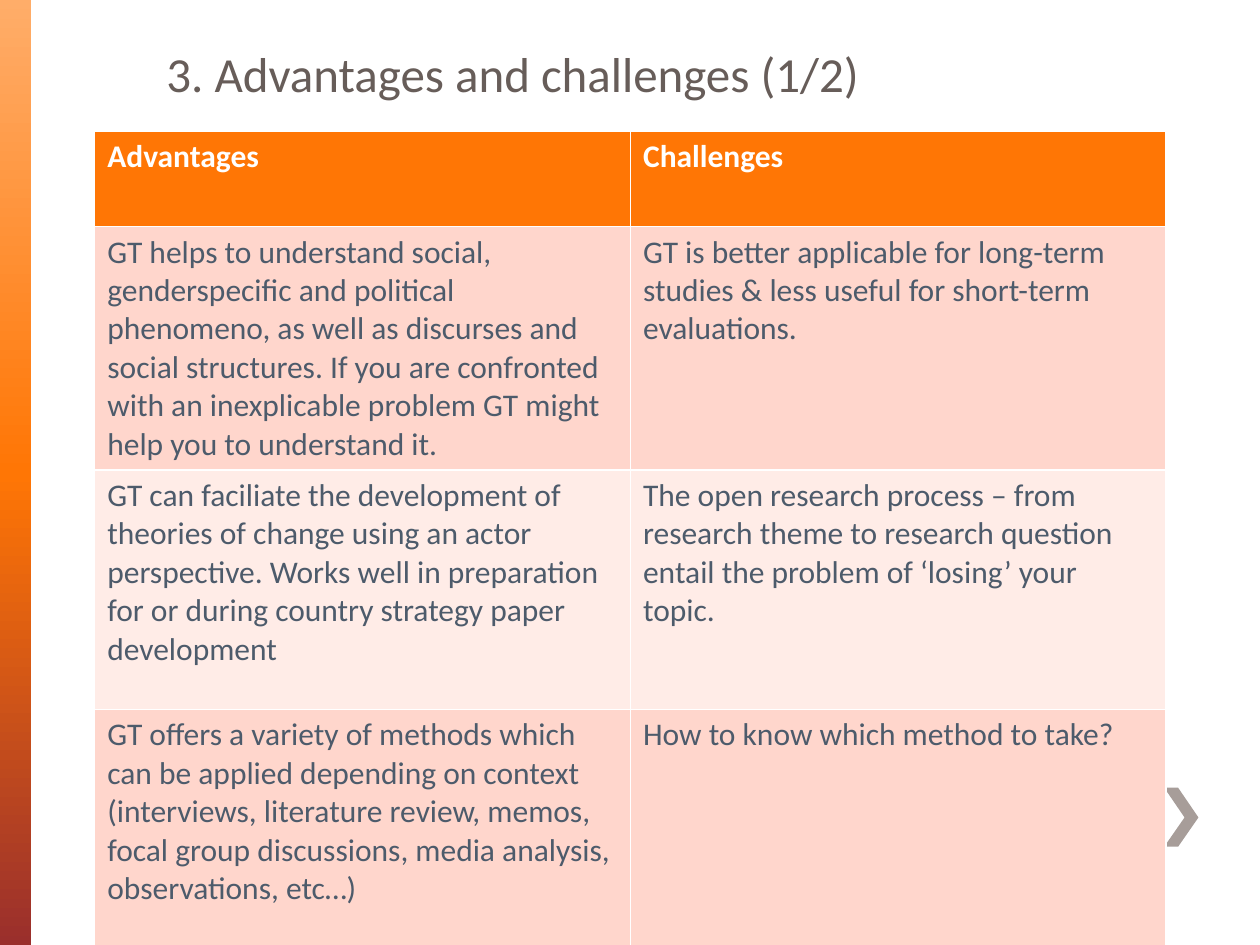
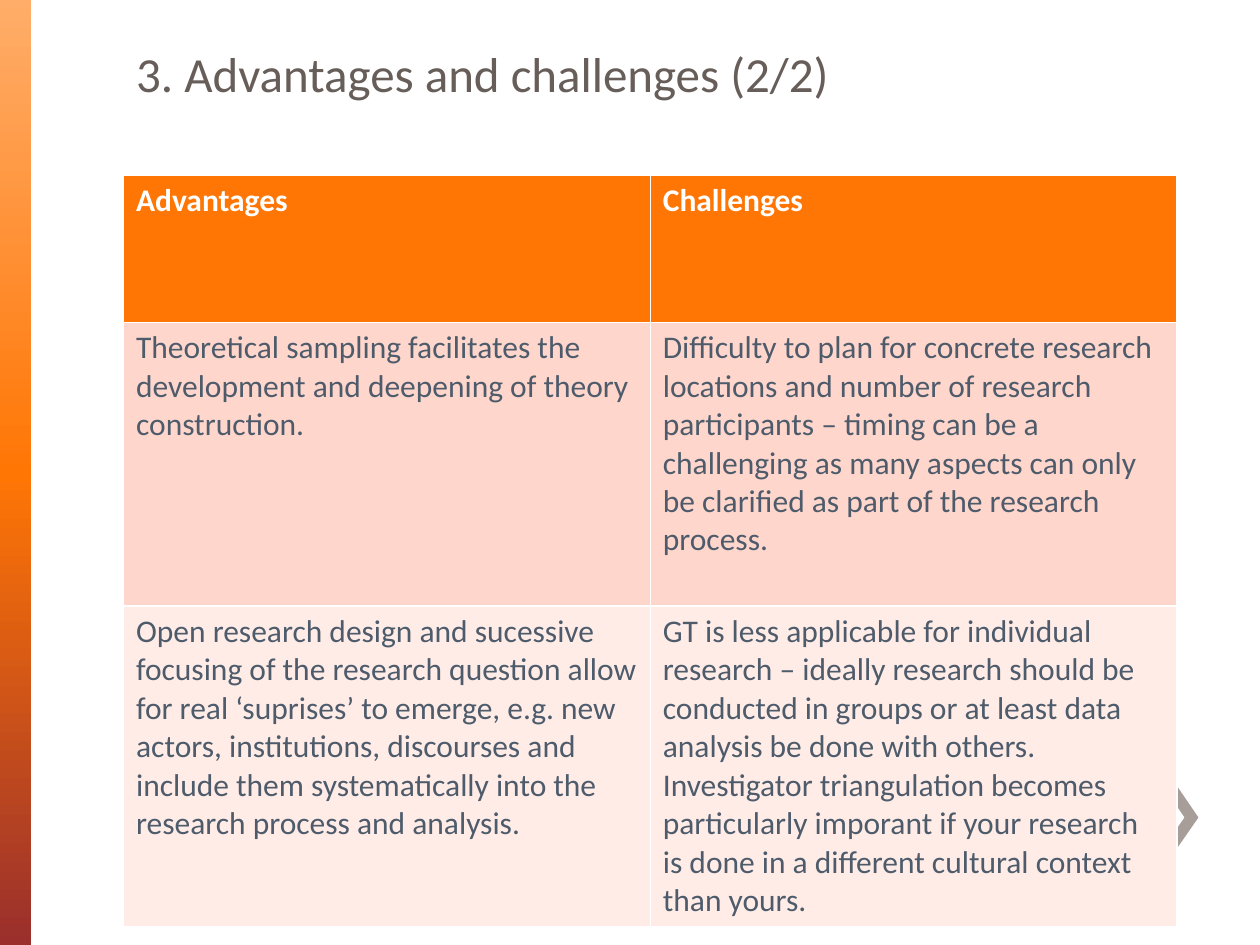
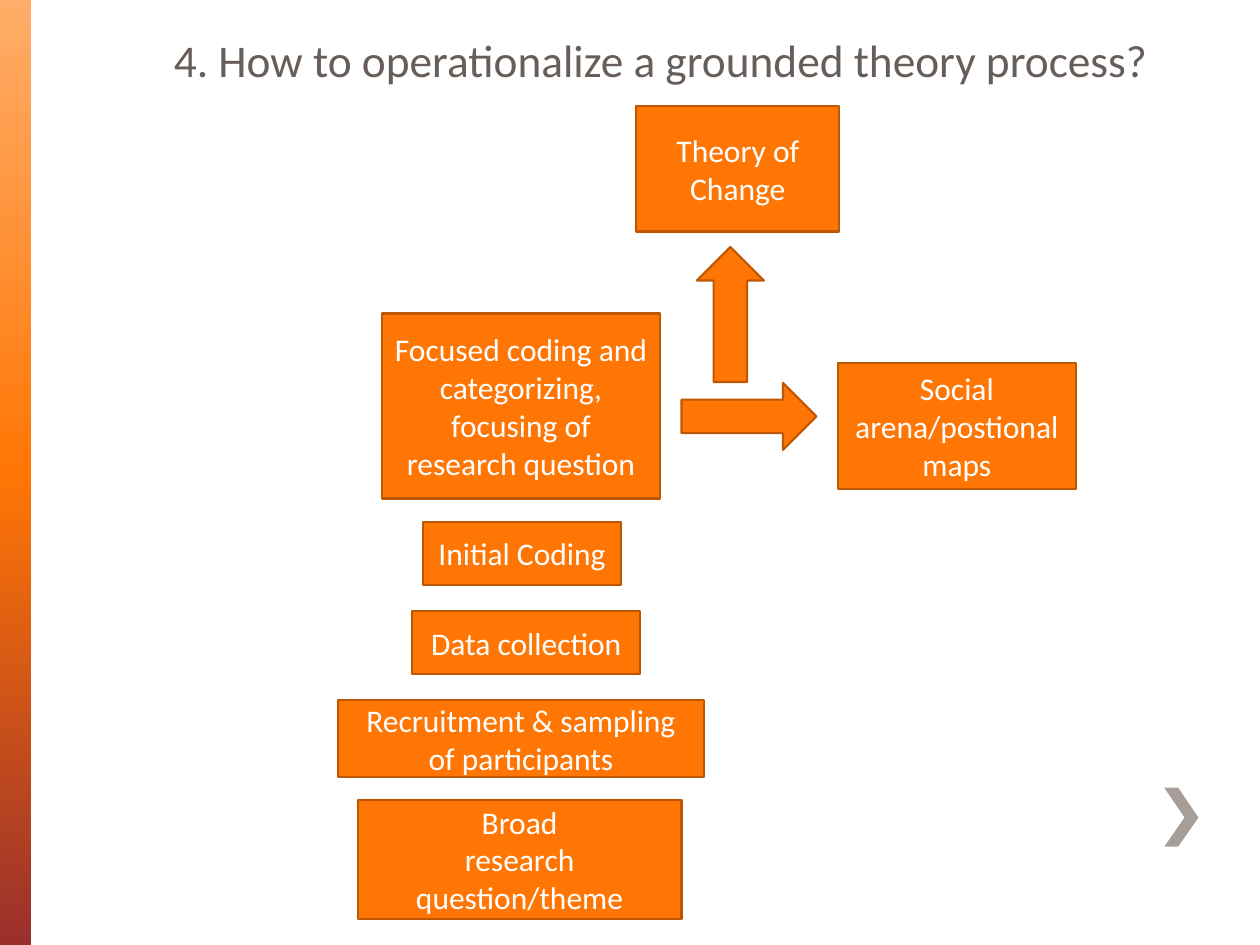
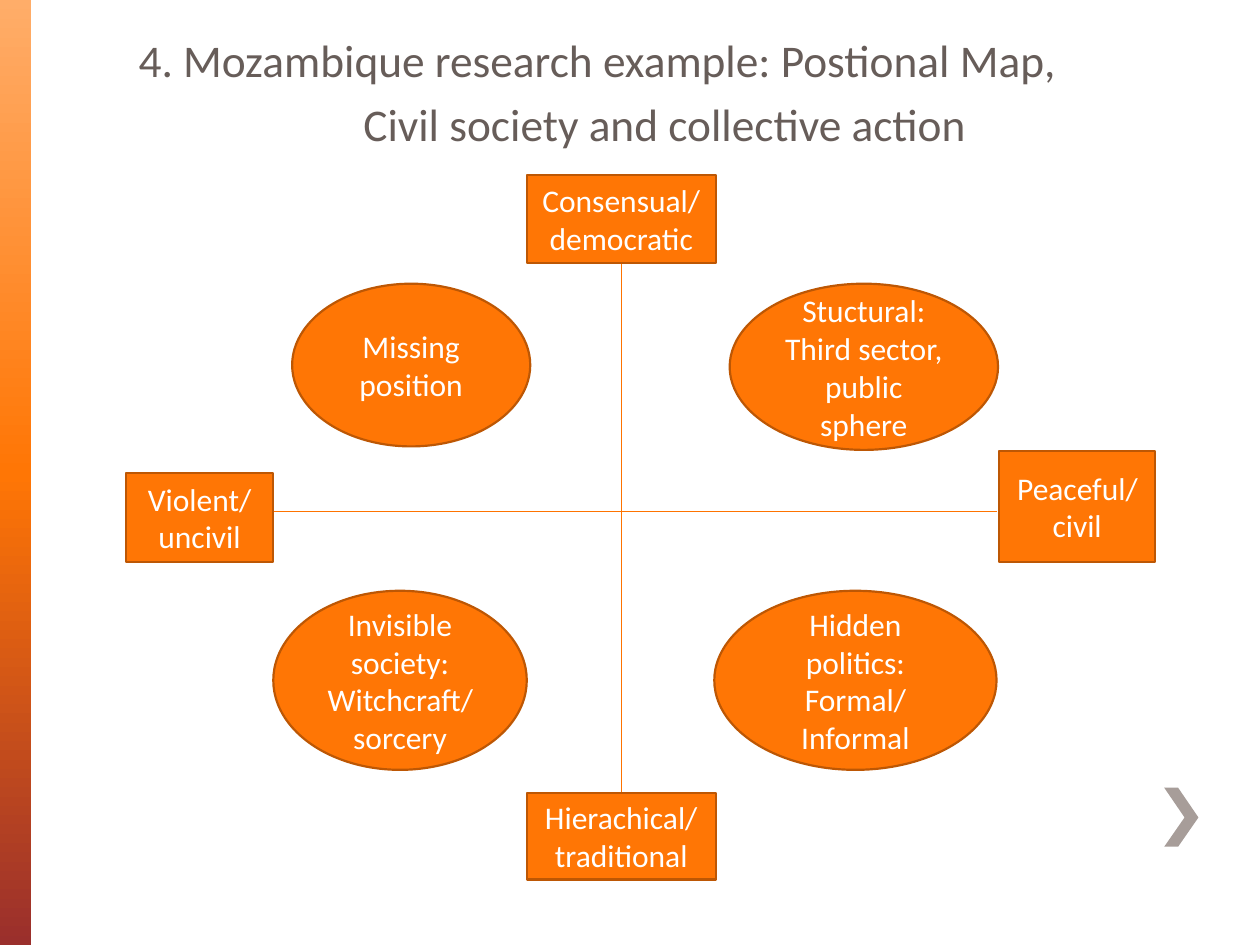
from copy import deepcopy

from lxml import etree
from pptx import Presentation
from pptx.dml.color import RGBColor
from pptx.enum.shapes import MSO_CONNECTOR, MSO_SHAPE
from pptx.enum.text import MSO_ANCHOR, MSO_AUTO_SIZE, PP_ALIGN
from pptx.oxml.ns import qn
from pptx.util import Cm, Pt

RECTANGLE = MSO_SHAPE.RECTANGLE
ELLIPSE = MSO_SHAPE.OVAL
RIGHT_ARROW = MSO_SHAPE.RIGHT_ARROW
UP_ARROW = MSO_SHAPE.UP_ARROW
STRAIGHT = MSO_CONNECTOR.STRAIGHT
TOP = MSO_ANCHOR.TOP
MIDDLE = MSO_ANCHOR.MIDDLE
LEFT = PP_ALIGN.LEFT
CENTER = PP_ALIGN.CENTER
NO_AUTOFIT = MSO_AUTO_SIZE.NONE

FONT = "Calibri"
ORANGE = "FF7605"
OUTLINE = "BD5704"
AXIS = "FE7300"
TITLE_TEXT = "675D59"
TABLE_TEXT = "4D5B6B"
CHEVRON = "A79D99"
WHITE = "FFFFFF"
ROW_FILLS = ["FFD6CC", "FFECE7"]
BAND_STOPS = [(0, "FFAD69"), (0.5, ORANGE), (1, "9A2F2C")]


def colour(hex_string):
    return RGBColor.from_string(hex_string)


def add_block(page, kind, text, left, top, width, height):
    block = page.shapes.add_shape(kind, Cm(left), Cm(top), Cm(width), Cm(height))
    block.shadow.inherit = False
    block.fill.solid()
    block.fill.fore_color.rgb = colour(ORANGE)
    block.line.color.rgb = colour(OUTLINE)
    block.line.width = Pt(1.25)
    block.text_frame.text = text
    block.text_frame.vertical_anchor = MIDDLE
    for para in block.text_frame.paragraphs:
        para.alignment = CENTER
        para.font.name = FONT
        para.font.size = Pt(18)
        para.font.color.rgb = colour(WHITE)
    return block


deck = Presentation()
deck.slide_width = Cm(25.4)
deck.slide_height = Cm(19.05)
layout = deck.slide_layouts[5]

# Pages and titles: text, size, left, top, width, height
titles = [
    ("3. Advantages and challenges (1/2)", 28, 3.1, 0.74, 20.62, 2.59),
    ("3. Advantages and challenges (2/2)", 28, 2.49, 0.74, 21.23, 2.59),
    ("4. How to operationalize a grounded theory process?", 25.9, 3.25, 0.53, 21.01, 2.01),
    ("4. Mozambique research example: Postional Map,\nCivil society and collective action",
     25.9, 2.54, 0.53, 21.72, 2.59),
]
pages = []
for text, size, left, top, width, height in titles:
    page = deck.slides.add_slide(layout)
    title = page.shapes.title
    title.left, title.top = Cm(left), Cm(top)
    title.width, title.height = Cm(width), Cm(height)
    frame = title.text_frame
    frame.text = text
    frame.word_wrap = True
    frame.auto_size = NO_AUTOFIT
    frame.vertical_anchor = TOP
    for number, para in enumerate(frame.paragraphs):
        para.alignment = CENTER if number else LEFT
        para.space_before = Pt(size * 0.2)
        para.font.name = FONT
        para.font.size = Pt(size)
        para.font.color.rgb = colour(TITLE_TEXT)
    pages.append(page)
page_table_one, page_table_two, page_process, page_map = pages

# Shared gradient band and chevron, built once and moved to the layout
band = page_table_one.shapes.add_shape(RECTANGLE, 0, 0, Cm(0.63), deck.slide_height)
band.fill.gradient()
band.fill.gradient_angle = 270
stop_list = band.element.spPr.find(".//" + qn("a:gsLst"))
stop_list.insert(1, deepcopy(stop_list[0]))
for stop, (position, shade) in zip(band.fill.gradient_stops, BAND_STOPS):
    stop.position = position
    stop.color.rgb = colour(shade)

outline = page_table_one.shapes.build_freeform(2375, 1588, scale=Cm(0.01))
outline.add_line_segments([(2347, 1588), (2388, 1648), (2347, 1707), (2375, 1707), (2416, 1648)])
chevron = outline.convert_to_shape()
chevron.fill.solid()
chevron.fill.fore_color.rgb = colour(CHEVRON)

for number, shape in enumerate([band, chevron], 20):
    shape.shadow.inherit = False
    shape.line.fill.background()
    shape.element.nvSpPr.cNvPr.set("id", str(number))
    layout.shapes.element.append(shape.element)

# Tables: page, left, top, column width, row heights, body rows
tables = [
    (page_table_one, 1.91, 2.64, 10.8, [1.93, 3.91, 4.83, 4.83], [
        ("GT helps to understand social, genderspecific and political phenomeno, as well as "
         "discurses and social structures. If you are confronted with an inexplicable problem "
         "GT might help you to understand it.",
         "GT is better applicable for long-term studies & less useful for short-term evaluations."),
        ("GT can faciliate the development of theories of change using an actor perspective. "
         "Works well in preparation for or during country strategy paper development",
         "The open research process – from research theme to research question entail the "
         "problem of ‘losing’ your topic."),
        ("GT offers a variety of methods which can be applied depending on context (interviews, "
         "literature review, memos, focal group discussions, media analysis, observations, etc…)",
         "How to know which method to take?"),
    ]),
    (page_table_two, 2.49, 3.53, 10.62, [2.97, 5.72, 5.72], [
        ("Theoretical sampling facilitates the development and deepening of theory construction.",
         "Difficulty to plan for concrete research locations and number of research participants "
         "– timing can be a challenging as many aspects can only be clarified as part of the "
         "research process."),
        ("Open research design and sucessive focusing of the research question allow for real "
         "‘suprises’ to emerge, e.g. new actors, institutions, discourses and include them "
         "systematically into the research process and analysis.",
         "GT is less applicable for individual research – ideally research should be conducted "
         "in groups or at least data analysis be done with others. Investigator triangulation "
         "becomes particularly imporant if your research is done in a different cultural context "
         "than yours."),
    ]),
]
for page, left, top, column_width, row_heights, body in tables:
    rows = [("Advantages", "Challenges")] + body
    table = page.shapes.add_table(len(rows), 2, Cm(left), Cm(top),
                                  Cm(2 * column_width), Cm(sum(row_heights))).table
    for column in table.columns:
        column.width = Cm(column_width)
    for row_number, texts in enumerate(rows):
        table.rows[row_number].height = Cm(row_heights[row_number])
        is_header = row_number == 0
        for column_number, text in enumerate(texts):
            cell = table.cell(row_number, column_number)
            cell.fill.solid()
            cell.fill.fore_color.rgb = colour(ORANGE if is_header else ROW_FILLS[(row_number - 1) % 2])
            cell.text = text
            para = cell.text_frame.paragraphs[0]
            para.font.name = FONT
            para.font.size = Pt(18)
            para.font.bold = is_header
            para.font.color.rgb = colour(WHITE if is_header else TABLE_TEXT)

# Grounded theory process, from the bottom up
process_blocks = [
    (RECTANGLE, "Broad\nresearch question/theme", 7.21, 16.13, 6.53, 2.39),
    (RECTANGLE, "Recruitment & sampling of participants", 6.81, 14.12, 7.39, 1.55),
    (RECTANGLE, "Data collection", 8.31, 12.32, 4.6, 1.27),
    (RECTANGLE, "Initial Coding", 8.53, 10.52, 3.99, 1.27),
    (RECTANGLE, "Focused coding and categorizing, focusing of research question",
     7.7, 6.32, 5.61, 3.73),
    (RIGHT_ARROW, "", 13.74, 7.72, 2.72, 1.35),
    (RECTANGLE, "Social arena/postional maps", 16.89, 7.32, 4.8, 2.54),
    (UP_ARROW, "", 14.05, 4.98, 1.35, 2.72),
    (RECTANGLE, "Theory of Change", 12.83, 2.13, 4.09, 2.54),
]
for block in process_blocks:
    add_block(page_process, *block)

# Positional map: axes behind the poles and positions
vertical_axis = page_map.shapes.add_connector(STRAIGHT, Cm(12.52), Cm(5.31), Cm(12.52), Cm(15.98))
horizontal_axis = page_map.shapes.add_connector(STRAIGHT, Cm(5.51), Cm(10.31), Cm(20.09), Cm(10.31))
for axis in (vertical_axis, horizontal_axis):
    axis.line.color.rgb = colour(AXIS)
    axis.line.width = Pt(0.75)
    etree.SubElement(axis.element.spPr, qn("a:effectLst"))

upper_pole = add_block(page_map, RECTANGLE, "Consensual/democratic", 10.62, 3.53, 3.81, 1.78)
lower_pole = add_block(page_map, RECTANGLE, "Hierachical/traditional", 10.62, 15.98, 3.81, 1.75)
vertical_axis.begin_connect(upper_pole, 2)
vertical_axis.end_connect(lower_pole, 0)

map_blocks = [
    (RECTANGLE, "Peaceful/civil", 20.14, 9.09, 3.15, 2.24),
    (RECTANGLE, "Violent/\nuncivil", 2.54, 9.53, 2.97, 1.8),
    (ELLIPSE, "Invisible society: Witchcraft/sorcery", 5.51, 11.91, 5.11, 3.61),
    (ELLIPSE, "Hidden politics:\nFormal/\nInformal", 14.4, 11.91, 5.69, 3.61),
    (ELLIPSE, "Stuctural: Third sector, public sphere", 14.71, 5.72, 5.41, 3.35),
    (ELLIPSE, "Missing position", 5.89, 5.72, 4.8, 3.28),
]
for block in map_blocks:
    add_block(page_map, *block)

deck.save("out.pptx")
